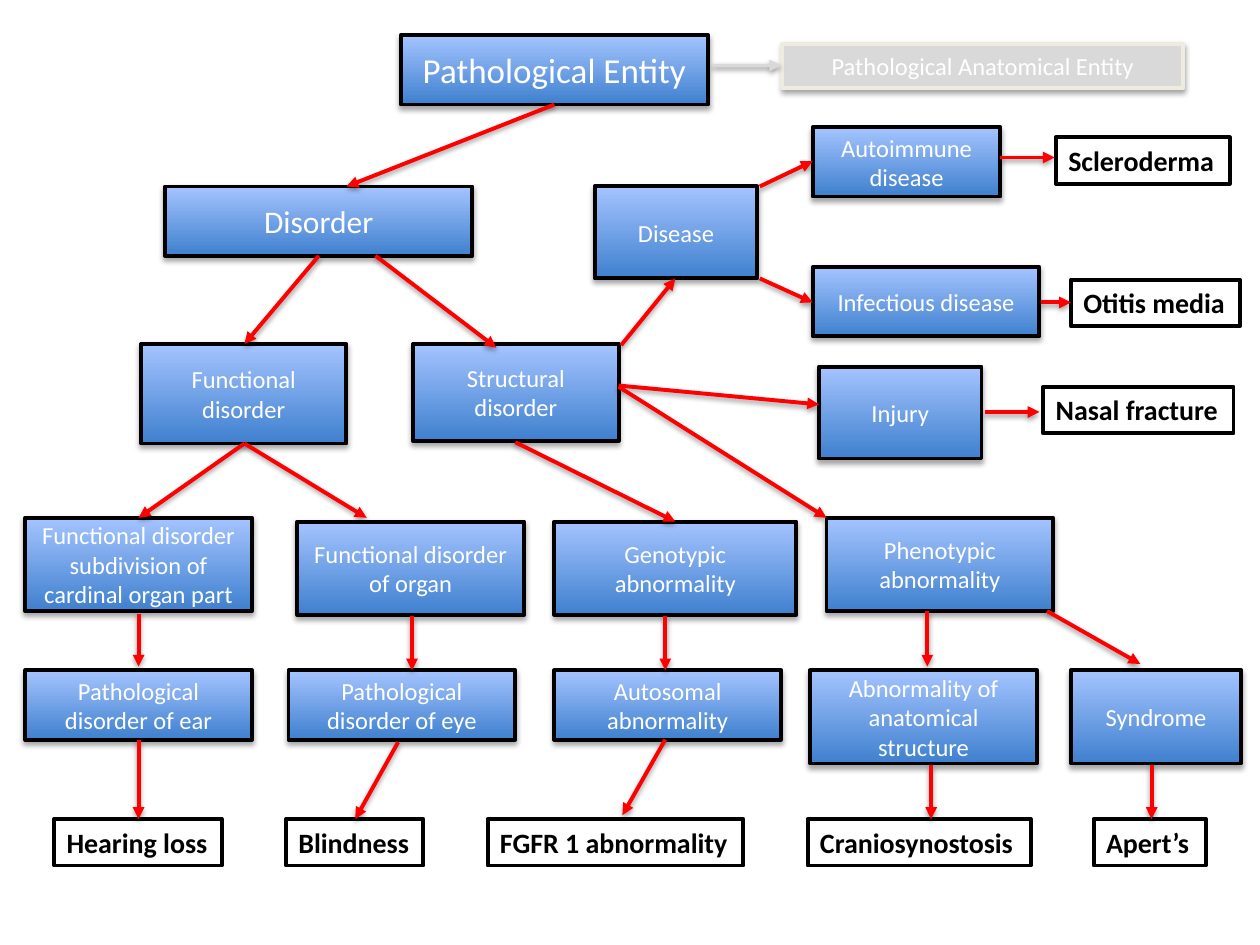
"""Build a one-slide tree of pathological entities with example findings."""
from dataclasses import dataclass
from typing import NamedTuple

from lxml import etree
from pptx import Presentation
from pptx.dml.color import RGBColor
from pptx.enum.shapes import MSO_CONNECTOR, MSO_SHAPE
from pptx.enum.text import MSO_ANCHOR, MSO_AUTO_SIZE, PP_ALIGN
from pptx.oxml.ns import qn
from pptx.util import Inches, Pt

RECTANGLE = MSO_SHAPE.RECTANGLE
STRAIGHT = MSO_CONNECTOR.STRAIGHT
MIDDLE = MSO_ANCHOR.MIDDLE
CENTER = PP_ALIGN.CENTER
LEFT = PP_ALIGN.LEFT
GROW = MSO_AUTO_SIZE.SHAPE_TO_FIT_TEXT


@dataclass(frozen=True)
class Theme:
    font: str = "Calibri"
    title_size: int = 20
    branch_size: int = 18
    node_size: int = 14
    example_size: int = 16
    line_width: float = 2.25
    node_bottom: str = "3F80CE"
    node_top: str = "A4C4FF"
    outline: str = "000000"
    node_text: str = "FFFFFF"
    example_text: str = "000000"
    arrow: str = "FF0000"
    muted: str = "D9D9D9"
    muted_outline: str = "EEECE1"
    node_shadow_alpha: int = 35
    node_shadow_distance: float = 1.8
    arrow_shadow_alpha: int = 38
    arrow_shadow_distance: float = 1.6
    shadow_blur: float = 3.1


THEME = Theme()


class Node(NamedTuple):
    text: str
    left: float
    top: float
    width: float = 1.8
    height: float = 0.55
    size: int = THEME.node_size
    muted: bool = False


class Example(NamedTuple):
    text: str
    left: float
    width: float
    top: float = 6.5
    height: float = 0.37


class Arrow(NamedTuple):
    start_x: float
    start_y: float
    end_x: float
    end_y: float
    color: str = THEME.arrow


KIND_TOP, CASE_TOP, EXAMPLE_TOP = 4.11, 5.32, 6.5
TALL = 0.74

NODES = [
    Node("Pathological Entity", 3.18, 0.28, 2.44, size=THEME.title_size),
    Node("Pathological Anatomical Entity", 6.21, 0.35, 3.18, 0.35, muted=True),
    Node("Disorder", 1.31, 1.48, 2.44, size=THEME.branch_size),
    Node("Functional disorder", 1.12, 2.73, 1.63, 0.79),
    Node("Structural disorder", 3.28, 2.73, 1.63, 0.77),
    Node("Disease", 4.72, 1.48, 1.29, 0.73),
    Node("Autoimmune disease", 6.45, 1.01, 1.49),
    Node("Infectious disease", 6.45, 2.12),
    Node("Injury", 6.5, 2.91, 1.29, 0.73),
    Node("Functional disorder subdivision of cardinal organ part", 0.2, KIND_TOP, height=TALL),
    Node("Functional disorder of organ", 2.36, 4.14, height=TALL),
    Node("Genotypic abnormality", 4.4, 4.14, 1.92, TALL),
    Node("Phenotypic abnormality", 6.56, KIND_TOP, height=TALL),
    Node("Pathological disorder of ear", 0.2, CASE_TOP),
    Node("Pathological disorder of eye", 2.29, CASE_TOP),
    Node("Autosomal abnormality", 4.4, CASE_TOP),
    Node("Abnormality of anatomical structure", 6.43, CASE_TOP, height=TALL),
    Node("Syndrome", 8.5, CASE_TOP, 1.35, TALL),
]

EXAMPLES = [
    Example("Hearing loss", 0.43, 1.33),
    Example("Blindness", 2.27, 1.09),
    Example("FGFR 1 abnormality", 3.87, 2.03),
    Example("Craniosynostosis", 6.41, 1.77),
    Example("Apert’s", 8.68, 0.89),
    Example("Scleroderma", 8.38, 1.38, 1.09),
    Example("Otitis media", 8.5, 1.34, 2.22),
    Example("Nasal fracture", 8.28, 1.51, 3.07),
]

ARROWS = [
    Arrow(4.4, 0.83, 2.75, 1.48),
    Arrow(5.66, 0.52, 6.2, 0.52, THEME.muted),
    Arrow(2.53, 2.03, 1.94, 2.73),
    Arrow(2.98, 2.03, 3.94, 2.76),
    Arrow(1.94, 3.52, 1.1, KIND_TOP),
    Arrow(1.94, 3.52, 2.91, KIND_TOP),
    Arrow(4.09, 3.51, 5.36, 4.14),
    Arrow(4.93, 2.74, 5.36, 2.21),
    Arrow(4.91, 3.06, 6.5, 3.21),
    Arrow(4.91, 3.07, 6.56, KIND_TOP),
    Arrow(6.03, 1.48, 6.45, 1.28),
    Arrow(6.03, 2.21, 6.45, 2.4),
    Arrow(7.94, 1.25, 8.37, 1.25),
    Arrow(8.26, 2.4, 8.5, 2.4),
    Arrow(7.82, 3.27, 8.25, 3.27),
    Arrow(1.1, 4.87, 1.1, 5.29),
    Arrow(3.27, 4.89, 3.27, CASE_TOP),
    Arrow(5.28, 4.89, 5.28, CASE_TOP),
    Arrow(7.36, 4.85, 7.36, 5.29),
    Arrow(8.31, 4.85, 9.05, 5.27),
    Arrow(1.1, 5.87, 1.1, EXAMPLE_TOP),
    Arrow(3.16, 5.89, 2.82, EXAMPLE_TOP),
    Arrow(5.28, 5.87, 4.94, 6.47),
    Arrow(7.39, 6.07, 7.39, EXAMPLE_TOP),
    Arrow(9.14, 6.07, 9.14, EXAMPLE_TOP),
]


def set_line(shape, color: str) -> None:
    shape.line.color.rgb = RGBColor.from_string(color)
    shape.line.width = Pt(THEME.line_width)


def add_shadow(properties, alpha: int, distance: float) -> None:
    effects = etree.SubElement(properties, qn("a:effectLst"))
    shadow = etree.SubElement(
        effects, qn("a:outerShdw"), blurRad=str(Pt(THEME.shadow_blur)),
        dist=str(Pt(distance)), dir="5400000", rotWithShape="0")
    color = etree.SubElement(shadow, qn("a:srgbClr"), val="000000")
    etree.SubElement(color, qn("a:alpha"), val=str(alpha * 1000))


def write(frame, text: str, size: int, color: str, align: PP_ALIGN, bold: bool = False) -> None:
    para = frame.paragraphs[0]
    para.alignment = align
    span = para.add_run()
    span.text = text
    span.font.name = THEME.font
    span.font.size = Pt(size)
    span.font.bold = bold
    span.font.color.rgb = RGBColor.from_string(color)


def draw_node(page, node: Node) -> None:
    box = page.shapes.add_shape(
        RECTANGLE, Inches(node.left), Inches(node.top), Inches(node.width), Inches(node.height))
    if node.muted:
        box.fill.solid()
        box.fill.fore_color.rgb = RGBColor.from_string(THEME.muted)
    else:
        box.fill.gradient()
        box.fill.gradient_angle = 90
        for stop, position, color in zip(
                box.fill.gradient_stops, (0, 1), (THEME.node_bottom, THEME.node_top)):
            stop.position = position
            stop.color.rgb = RGBColor.from_string(color)
    set_line(box, THEME.muted_outline if node.muted else THEME.outline)
    add_shadow(box.element.spPr, THEME.node_shadow_alpha, THEME.node_shadow_distance)
    box.text_frame.word_wrap = True
    box.text_frame.vertical_anchor = MIDDLE
    write(box.text_frame, node.text, node.size, THEME.node_text, CENTER)


def draw_example(page, example: Example) -> None:
    box = page.shapes.add_textbox(
        Inches(example.left), Inches(example.top), Inches(example.width), Inches(example.height))
    set_line(box, THEME.outline)
    box.text_frame.word_wrap = False
    box.text_frame.auto_size = GROW
    write(box.text_frame, example.text, THEME.example_size, THEME.example_text, LEFT, bold=True)


def draw_arrow(page, arrow: Arrow) -> None:
    connector = page.shapes.add_connector(
        STRAIGHT, Inches(arrow.start_x), Inches(arrow.start_y),
        Inches(arrow.end_x), Inches(arrow.end_y))
    set_line(connector, arrow.color)
    properties = connector.element.spPr
    etree.SubElement(properties.find(qn("a:ln")), qn("a:tailEnd"), type="triangle")
    add_shadow(properties, THEME.arrow_shadow_alpha, THEME.arrow_shadow_distance)


def main() -> None:
    deck = Presentation()
    deck.slide_width, deck.slide_height = Inches(10), Inches(7.5)
    page = deck.slides.add_slide(deck.slide_layouts[6])
    for node in NODES:
        draw_node(page, node)
    for example in EXAMPLES:
        draw_example(page, example)
    for arrow in ARROWS:
        draw_arrow(page, arrow)
    deck.save("out.pptx")


if __name__ == "__main__":
    main()
